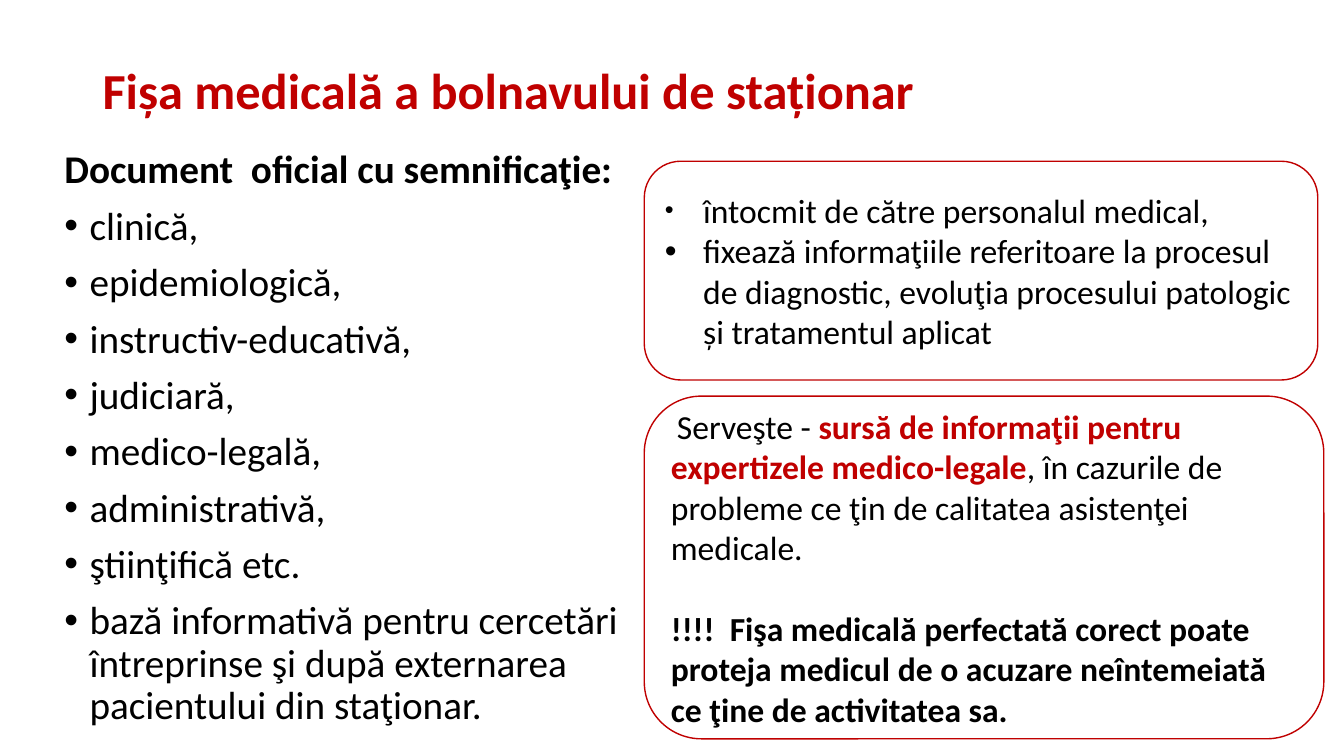
from lxml import etree
from pptx import Presentation
from pptx.dml.color import RGBColor
from pptx.enum.shapes import MSO_SHAPE
from pptx.enum.text import MSO_ANCHOR, PP_ALIGN
from pptx.oxml.ns import qn
from pptx.util import Inches, Pt

ROUNDED = MSO_SHAPE.ROUNDED_RECTANGLE
TOP, MIDDLE = MSO_ANCHOR.TOP, MSO_ANCHOR.MIDDLE
LEFT = PP_ALIGN.LEFT
COLORS = {"accent": "C00000", "text": "000000"}
FONT = "Calibri"

MEANINGS = [
    "clinică,",
    "epidemiologică,",
    "instructiv-educativă,",
    "judiciară,",
    "medico-legală,",
    "administrativă,",
    "ştiinţifică etc.",
    "bază informativă pentru cercetări întreprinse şi după externarea "
    "pacientului din staţionar.",
]


class SlideBuilder:
    def __init__(self, slide):
        self.slide = slide

    def text_box(self, left, top, width, height, anchor=TOP):
        box = self.slide.shapes.add_textbox(
            Inches(left), Inches(top), Inches(width), Inches(height))
        return self.prepare_frame(box, anchor)

    def rounded_box(self, left, top, width, height):
        shape = self.slide.shapes.add_shape(
            ROUNDED, Inches(left), Inches(top), Inches(width), Inches(height))
        shape.shadow.inherit = False
        shape.fill.background()
        shape.line.color.rgb = RGBColor.from_string(COLORS["accent"])
        shape.line.width = Pt(1)
        return self.prepare_frame(shape, MIDDLE)

    def prepare_frame(self, shape, anchor):
        frame = shape.text_frame
        frame.word_wrap = True
        frame.vertical_anchor = anchor
        return frame

    def paragraph(self, frame, runs, size, bold=False, color="text", spacing=1.0,
                  before=0, bullet_indent=0, bullet_percent=100, first_line=0):
        """Add a paragraph; runs is a string or a list of (text, emphasized)."""
        first = frame.paragraphs[0]
        paragraph = frame.add_paragraph() if first.runs else first
        paragraph.alignment = LEFT
        paragraph.line_spacing = spacing
        paragraph.space_before = Pt(before)
        properties = paragraph._p.get_or_add_pPr()
        properties.set("marL", str(Inches(bullet_indent)))
        properties.set("indent", str(Inches(first_line - bullet_indent)))
        if bullet_indent:
            for tag, name, value in (
                    ("a:buSzPct", "val", str(bullet_percent * 1000)),
                    ("a:buFont", "typeface", "Arial"),
                    ("a:buChar", "char", "•")):
                etree.SubElement(properties, qn(tag)).set(name, value)
        paragraph.font.name = FONT
        paragraph.font.size = Pt(size)
        mixed = not isinstance(runs, str)
        if not mixed:
            paragraph.font.bold = bold
            paragraph.font.color.rgb = RGBColor.from_string(COLORS[color])
        for text, emphasized in runs if mixed else [(runs, False)]:
            run = paragraph.add_run()
            run.text = text
            if mixed:
                run.font.bold = emphasized
                run_color = COLORS["accent" if emphasized else "text"]
                run.font.color.rgb = RGBColor.from_string(run_color)


def main():
    presentation = Presentation()
    presentation.slide_width = Inches(13.33)
    presentation.slide_height = Inches(7.5)
    builder = SlideBuilder(
        presentation.slides.add_slide(presentation.slide_layouts[6]))

    title = builder.text_box(0.92, 0.4, 11.5, 1.05, MIDDLE)
    builder.paragraph(title, "Fișa medicală a bolnavului de staționar", 36,
                      bold=True, color="accent", spacing=0.9)

    meanings = builder.text_box(0.54, 1.44, 6, 6.06)
    builder.paragraph(meanings, "Document  oficial cu semnificaţie:", 28,
                      bold=True, spacing=0.9, before=10)
    for meaning in MEANINGS:
        builder.paragraph(meanings, meaning, 28, spacing=0.9, before=10,
                          bullet_indent=0.25)

    content = builder.rounded_box(6.39, 1.6, 6.68, 2.17)
    builder.paragraph(content, "întocmit de către personalul medical,", 24,
                      bullet_indent=0.38, bullet_percent=75)
    builder.paragraph(
        content,
        "fixează informaţiile referitoare la procesul de diagnostic, evoluţia "
        "procesului patologic și tratamentul aplicat",
        24, bullet_indent=0.38)

    purpose = builder.rounded_box(6.39, 3.93, 6.74, 3.4)
    builder.paragraph(purpose, [
        ("Serveşte - ", False),
        ("sursă de informaţii pentru expertizele medico-legale", True),
        (", în cazurile de probleme ce ţin de calitatea asistenţei medicale.", False),
    ], 24, first_line=0.06)
    builder.paragraph(
        purpose,
        "!!!!  Fişa medicală perfectată corect poate proteja medicul de o "
        "acuzare neîntemeiată ce ţine de activitatea sa.",
        24, bold=True, before=29)

    presentation.save("out.pptx")


if __name__ == "__main__":
    main()
